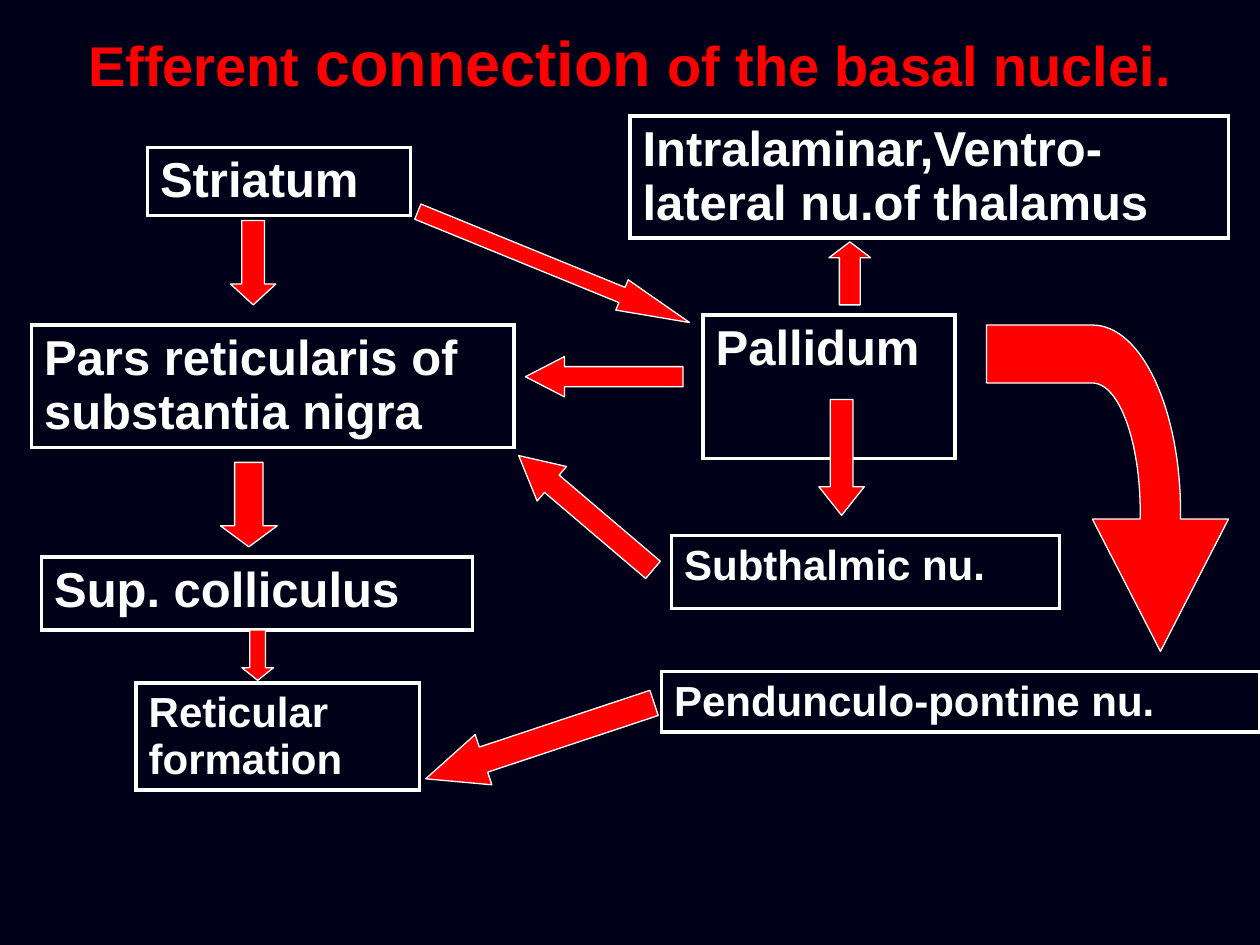
import pptx
import pptx.util
import pptx.dml.color
import pptx.enum.shapes
import pptx.enum.text
import pptx.oxml

Inches = pptx.util.Inches
Pt = pptx.util.Pt
ARROW = pptx.enum.shapes.MSO_SHAPE
NAVY, RED, WHITE = "000018", "FF0000", "FFFFFF"


def color(hex_value):
    return pptx.dml.color.RGBColor.from_string(hex_value)


def write(paragraph, text, size=28, fill=WHITE):
    run = paragraph.add_run()
    run.text = text
    run.font.name = "Arial"
    run.font.size = Pt(size)
    run.font.bold = True
    run.font.color.rgb = color(fill)


deck = pptx.Presentation()
deck.slide_width, deck.slide_height = Inches(10), Inches(7.5)
slide = deck.slides.add_slide(deck.slide_layouts[6])
slide.background.fill.solid()
slide.background.fill.fore_color.rgb = color(NAVY)

# Title
title = slide.shapes.add_textbox(Inches(0.5), Inches(0.3), Inches(9), Inches(0.37)).text_frame
title.word_wrap = True
title.vertical_anchor = pptx.enum.text.MSO_ANCHOR.MIDDLE
heading = title.paragraphs[0]
heading.alignment = pptx.enum.text.PP_ALIGN.CENTER
for words, size in [("Efferent ", 32), ("connection", 36), (" of the basal nuclei.", 32)]:
    write(heading, words, size=size, fill=RED)

# Nuclei: one-cell bordered tables (name, text size, left, top, width, height)
nuclei = [
    ("Pallidum", 28, 5.58, 2.5, 2, 1.14),
    ("Striatum", 28, 1.17, 1.17, 2.09, 0.54),
    ("Intralaminar,Ventro-lateral nu.of thalamus", 28, 5, 0.92, 4.75, 0.97),
    ("Pars reticularis of substantia nigra", 28, 0.25, 2.58, 3.83, 0.97),
    ("Subthalmic nu.", 24, 5.33, 4.25, 3.08, 0.58),
    ("Pendunculo-pontine nu.", 24, 5.25, 5.33, 4.75, 0.48),
    ("Reticular formation", 24, 1.08, 5.42, 2.25, 0.85),
    ("Sup. colliculus", 28, 0.33, 4.42, 3.42, 0.58),
]
line_heights = {28: 31, 24: 27}
for name, size, left, top, width, height in nuclei:
    table = slide.shapes.add_table(
        1, 1, Inches(left), Inches(top), Inches(width), Inches(height)).table
    table.first_row = table.horz_banding = False
    cell = table.cell(0, 0)
    label = cell.text_frame.paragraphs[0]
    label.line_spacing = Pt(line_heights[size])
    write(label, name, size=size)
    borders = cell._tc.get_or_add_tcPr()
    for side in "LRTB":
        borders.append(pptx.oxml.parse_xml(
            f'<a:ln{side} xmlns:a="http://schemas.openxmlformats.org/drawingml/2006/main" '
            f'w="{Pt(2.25)}"><a:solidFill><a:srgbClr val="{WHITE}"/></a:solidFill></a:ln{side}>'))
    cell.fill.background()

# Straight pathways (shape, left, top, width, height, head length, rotation)
pathways = [
    (ARROW.RIGHT_ARROW, 3.23, 1.99, 2.33, 0.26, 2.23, 22.2),
    (ARROW.UP_ARROW, 6.58, 1.92, 0.33, 0.5, 0.38, 0),
    (ARROW.DOWN_ARROW, 1.83, 1.75, 0.36, 0.67, 0.46, 0),
    (ARROW.DOWN_ARROW, 1.75, 3.67, 0.45, 0.67, 0.37, 0),
    (ARROW.DOWN_ARROW, 6.5, 3.17, 0.36, 0.92, 0.63, 0),
    (ARROW.LEFT_ARROW, 3.95, 3.89, 1.4, 0.36, 0.96, 40.4),
    (ARROW.LEFT_ARROW, 4.17, 2.83, 1.25, 0.32, 0.97, 0),
    (ARROW.DOWN_ARROW, 1.92, 5, 0.25, 0.4, 0.4, 0),
    (ARROW.LEFT_ARROW, 3.33, 5.67, 1.91, 0.42, 1.15, 341.6),
]
arrows = []
for kind, left, top, width, height, head, rotation in pathways:
    arrow = slide.shapes.add_shape(
        kind, Inches(left), Inches(top), Inches(width), Inches(height))
    arrow.adjustments[0], arrow.adjustments[1] = 0.5, head
    arrow.rotation = rotation
    arrows.append(arrow)

# Curved pathway from pallidum to pedunculopontine nucleus: Bezier edges as fine polylines
outer_edge = [(9.37, 4.07), (9.37, 3.25), (9.06, 2.58), (8.67, 2.58)]
inner_edge = [(8.67, 3.04), (8.88, 3.04), (9.05, 3.5), (9.05, 4.07)]
curves = []
for edge in (outer_edge, inner_edge):
    points = []
    for step in range(33):
        t = step / 32
        weights = ((1 - t) ** 3, 3 * t * (1 - t) ** 2, 3 * t ** 2 * (1 - t), t ** 3)
        points.append(tuple(sum(w * p[axis] for w, p in zip(weights, edge)) for axis in (0, 1)))
    curves.append(points)
outline = ([(9.21, 5.17), (9.75, 4.12), (9.37, 4.12)] + curves[0]
           + [(7.83, 2.58), (7.83, 3.04)] + curves[1] + [(9.05, 4.12), (8.67, 4.12)])
outline = [(Inches(x), Inches(y)) for x, y in outline]
bend = slide.shapes.build_freeform(*outline[0])
bend.add_line_segments(outline[1:], close=True)
arrows.append(bend.convert_to_shape())

# Shared arrow style
for arrow in arrows:
    arrow.shadow.inherit = False
    arrow.fill.solid()
    arrow.fill.fore_color.rgb = color(RED)
    arrow.line.color.rgb = color(WHITE)
    arrow.line.width = Pt(0.75)

deck.save("out.pptx")
